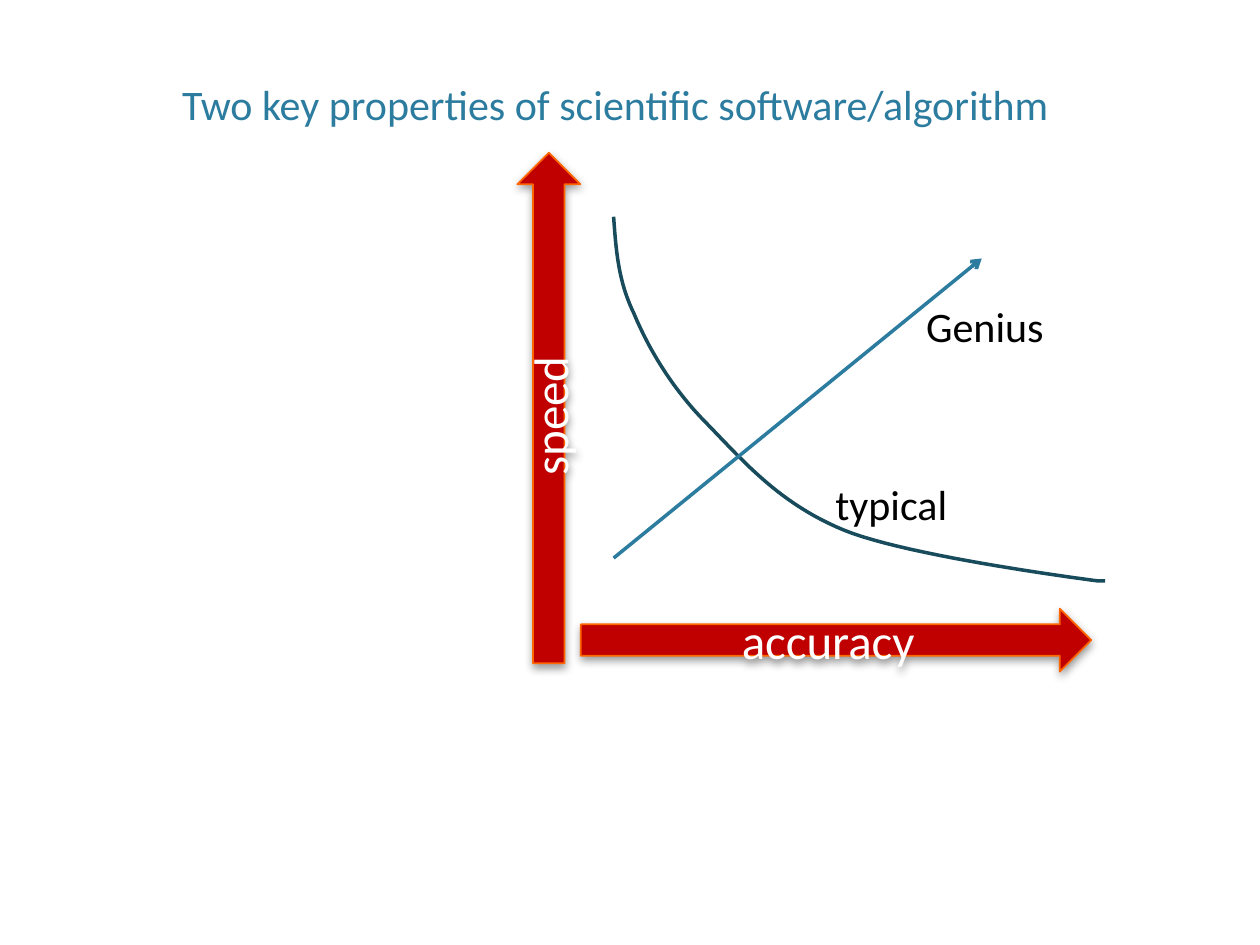
import pptx
import pptx.dml.color
import pptx.enum.shapes
import pptx.enum.text
import pptx.oxml
import pptx.oxml.ns
import pptx.util
from pptx.util import Cm

RGBColor = pptx.dml.color.RGBColor
ANCHOR = pptx.enum.text.MSO_ANCHOR
ALIGN = pptx.enum.text.PP_ALIGN

RED = RGBColor(0xC0, 0x00, 0x00)
ORANGE = RGBColor(0xFF, 0x66, 0x00)
BLUE = RGBColor(0x2C, 0x7C, 0x9F)
DARK_BLUE = RGBColor(0x18, 0x4B, 0x5B)
WHITE = RGBColor(0xFF, 0xFF, 0xFF)
BLACK = RGBColor(0x00, 0x00, 0x00)

TITLE = ("Two key properties of scientific software/algorithm", (1.52, 0.76, 21.77, 1.96))
AXES = [
    ("accuracy", (11.71, 12.27, 10.29, 1.27), 0),
    ("speed", (5.92, 7.59, 10.29, 1.27), 270),
]
TYPICAL_LABEL = ("typical", (16.59, 9.53, 3.2, 1.27))
GENIUS_LABEL = ("Genius", (18.42, 5.94, 3.28, 1.27))
CURVE_START = (12.37, 4.37)
CURVE_SEGMENTS = [
    ((12.42, 5), (12.45, 5.64), (12.78, 6.32)),
    ((13.08, 7.04), (13.56, 7.85), (14.27, 8.56)),
    ((14.99, 9.3), (15.72, 10.16), (17.02, 10.69)),
    ((18.34, 11.23), (22.12, 11.71), (22.12, 11.71)),
]
CURVE_END = (22.28, 11.71)
GENIUS_LINE = (12.37, 11.25, 19.79, 5.21)
STEPS = 24

SHADOW = (
    '<a:effectLst %s><a:outerShdw blurRad="63500" dist="25400" dir="5400000" rotWithShape="0">'
    '<a:srgbClr val="000000"><a:alpha val="40000"/></a:srgbClr></a:outerShdw></a:effectLst>'
) % pptx.oxml.ns.nsdecls("a")
NO_EFFECT = "<a:effectLst %s/>" % pptx.oxml.ns.nsdecls("a")
ARROWHEAD = '<a:tailEnd %s type="arrow"/>' % pptx.oxml.ns.nsdecls("a")


def write_text(shape, text, size=24, color=BLACK, align=ALIGN.LEFT, anchor=ANCHOR.TOP, wrap=True):
    frame = shape.text_frame
    frame.word_wrap = wrap
    frame.vertical_anchor = anchor
    paragraph = frame.paragraphs[0]
    paragraph.alignment = align
    run = paragraph.add_run()
    run.text = text
    run.font.name = "Calibri"
    run.font.size = pptx.util.Pt(size)
    run.font.color.rgb = color


def add_text_box(shapes, text, box, **text_format):
    write_text(shapes.add_textbox(*map(Cm, box)), text, **text_format)


def set_line(shape, color, width):
    shape.line.color.rgb = color
    shape.line.width = pptx.util.Pt(width)


def add_axis(shapes, text, box, rotation):
    arrow = shapes.add_shape(pptx.enum.shapes.MSO_SHAPE.RIGHT_ARROW, *map(Cm, box))
    arrow.rotation = rotation
    arrow.fill.solid()
    arrow.fill.fore_color.rgb = RED
    set_line(arrow, ORANGE, 1)
    arrow.element.spPr.append(pptx.oxml.parse_xml(SHADOW))
    write_text(arrow, text, size=28, color=WHITE, align=ALIGN.CENTER, anchor=ANCHOR.MIDDLE)


def curve_points():
    start = CURVE_START
    for first, second, end in CURVE_SEGMENTS:
        for step in range(1, STEPS + 1):
            t = step / STEPS
            u = 1 - t
            yield tuple(
                Cm(u**3 * a + 3 * u * u * t * b + 3 * u * t * t * c + t**3 * d)
                for a, b, c, d in zip(start, first, second, end)
            )
        start = end
    yield tuple(map(Cm, CURVE_END))


def add_typical(shapes):
    builder = shapes.build_freeform(*map(Cm, CURVE_START))
    builder.add_line_segments(list(curve_points()), close=False)
    curve = builder.convert_to_shape()
    curve.shadow.inherit = False
    curve.fill.background()
    set_line(curve, DARK_BLUE, 2)
    add_text_box(shapes, *TYPICAL_LABEL, wrap=False)


def add_genius(shapes):
    line = shapes.add_connector(pptx.enum.shapes.MSO_CONNECTOR.STRAIGHT, *map(Cm, GENIUS_LINE))
    set_line(line, BLUE, 2)
    line.line.fill.solid()
    line.line.color.rgb = BLUE
    properties = line.element.spPr
    properties.find(pptx.oxml.ns.qn("a:ln")).append(pptx.oxml.parse_xml(ARROWHEAD))
    properties.append(pptx.oxml.parse_xml(NO_EFFECT))
    add_text_box(shapes, *GENIUS_LABEL, wrap=False)


def main():
    presentation = pptx.Presentation()
    presentation.slide_width = Cm(25.4)
    presentation.slide_height = Cm(19.05)
    slide = presentation.slides.add_slide(presentation.slide_layouts[6])
    add_text_box(slide.shapes, *TITLE, color=BLUE, align=ALIGN.CENTER, anchor=ANCHOR.BOTTOM)
    for axis in AXES:
        add_axis(slide.shapes, *axis)
    for add_content in (add_typical, add_genius):
        add_content(slide.shapes.add_group_shape().shapes)
    presentation.save("out.pptx")


if __name__ == "__main__":
    main()
